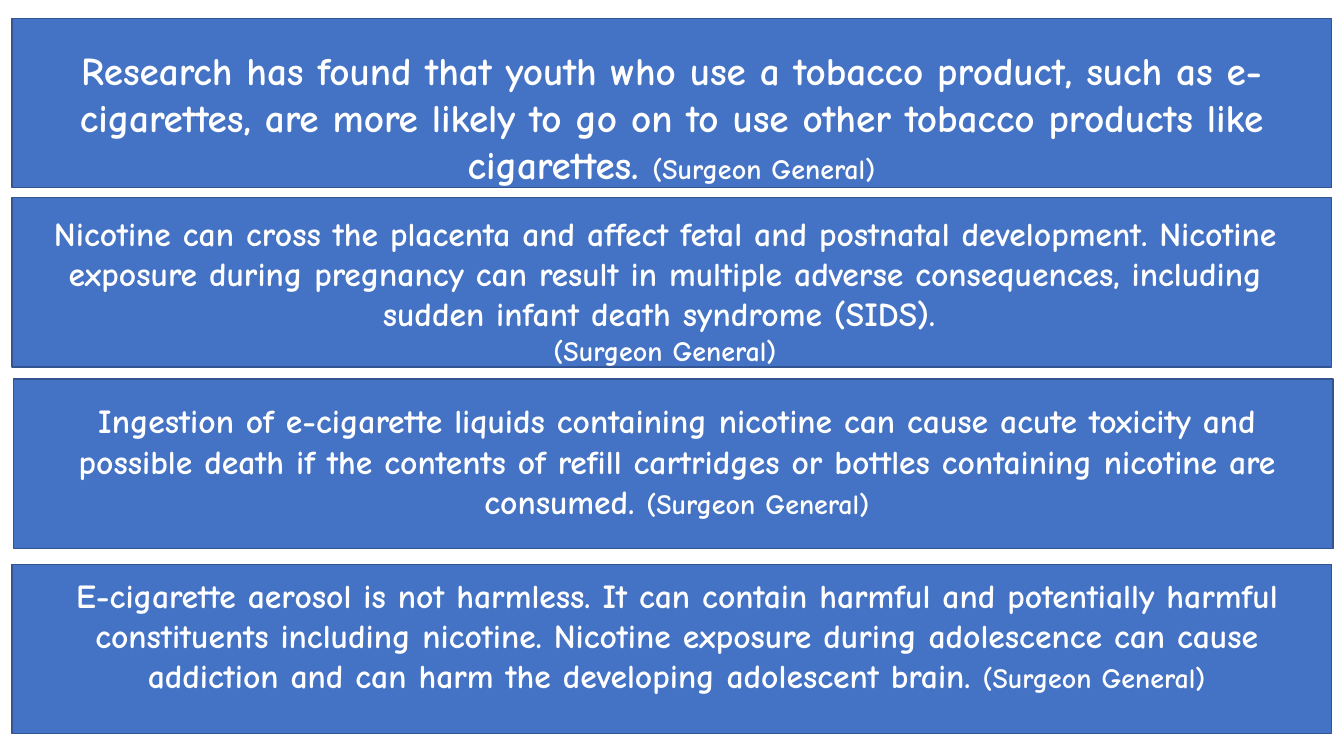
from collections import namedtuple

from pptx import Presentation
from pptx.dml.color import RGBColor
from pptx.enum.shapes import MSO_SHAPE
from pptx.enum.text import MSO_ANCHOR, PP_ALIGN
from pptx.util import Cm, Pt

PANEL_BLUE = RGBColor(0x44, 0x72, 0xC4)
BORDER_BLUE = RGBColor(0x32, 0x54, 0x91)
WHITE = RGBColor(0xFF, 0xFF, 0xFF)
FONT_NAME = "Comic Neue"
CITATION = "(Surgeon General)"
CITATION_SIZE = 20
PANEL_WIDTH, PANEL_HEIGHT = 33.25, 4.27

Fact = namedtuple(
    "Fact", "left top indent drop width height size citation_below statement"
)

FACTS = [
    Fact(0.3, 0.46, 0, 0.58, 33.25, 3.84, 28, False,
         "Research has found that youth who use a tobacco product, such as "
         "e-cigarettes, are more likely to go on to use other tobacco products "
         "like cigarettes. "),
    Fact(0.3, 4.98, 0, 0.25, 32.92, 5.38, 24, True,
         "Nicotine can cross the placenta and affect fetal and postnatal "
         "development. Nicotine exposure during pregnancy can result in multiple "
         "adverse consequences, including sudden infant death syndrome (SIDS). "),
    Fact(0.34, 9.55, 0.4, 0.41, 32.64, 4.37, 24, False,
         "Ingestion of e-cigarette liquids containing nicotine can cause acute "
         "toxicity and possible death if the contents of refill cartridges or "
         "bottles containing nicotine are consumed. "),
    Fact(0.3, 14.22, 0.26, 0.13, 32.99, 4.19, 24, False,
         "E-cigarette aerosol is not harmless. It can contain harmful and "
         "potentially harmful constituents including nicotine. Nicotine exposure "
         "during adolescence can cause addiction and can harm the developing "
         "adolescent brain. "),
]


def style_paragraph(paragraph):
    paragraph.alignment = PP_ALIGN.CENTER
    paragraph.font.name = FONT_NAME
    paragraph.font.bold = True
    paragraph.font.color.rgb = WHITE


def add_run(paragraph, text, size):
    run = paragraph.add_run()
    run.text = text
    run.font.size = Pt(size)


def add_fact_panel(slide, fact):
    panel = slide.shapes.add_shape(
        MSO_SHAPE.RECTANGLE, Cm(fact.left), Cm(fact.top),
        Cm(PANEL_WIDTH), Cm(PANEL_HEIGHT),
    )
    panel.shadow.inherit = False
    panel.fill.solid()
    panel.fill.fore_color.rgb = PANEL_BLUE
    panel.line.color.rgb = BORDER_BLUE
    panel.line.width = Pt(1)

    text_box = slide.shapes.add_textbox(
        Cm(fact.left + fact.indent), Cm(fact.top + fact.drop),
        Cm(fact.width), Cm(fact.height),
    )
    text_frame = text_box.text_frame
    text_frame.word_wrap = True
    text_frame.vertical_anchor = MSO_ANCHOR.TOP
    paragraph = text_frame.paragraphs[0]
    style_paragraph(paragraph)
    add_run(paragraph, fact.statement, fact.size)
    if fact.citation_below:
        paragraph = text_frame.add_paragraph()
        style_paragraph(paragraph)
    add_run(paragraph, CITATION, CITATION_SIZE)


def main():
    presentation = Presentation()
    presentation.slide_width = Cm(33.87)
    presentation.slide_height = Cm(19.05)
    slide = presentation.slides.add_slide(presentation.slide_layouts[6])
    for fact in FACTS:
        add_fact_panel(slide, fact)
    presentation.save("out.pptx")


if __name__ == "__main__":
    main()
